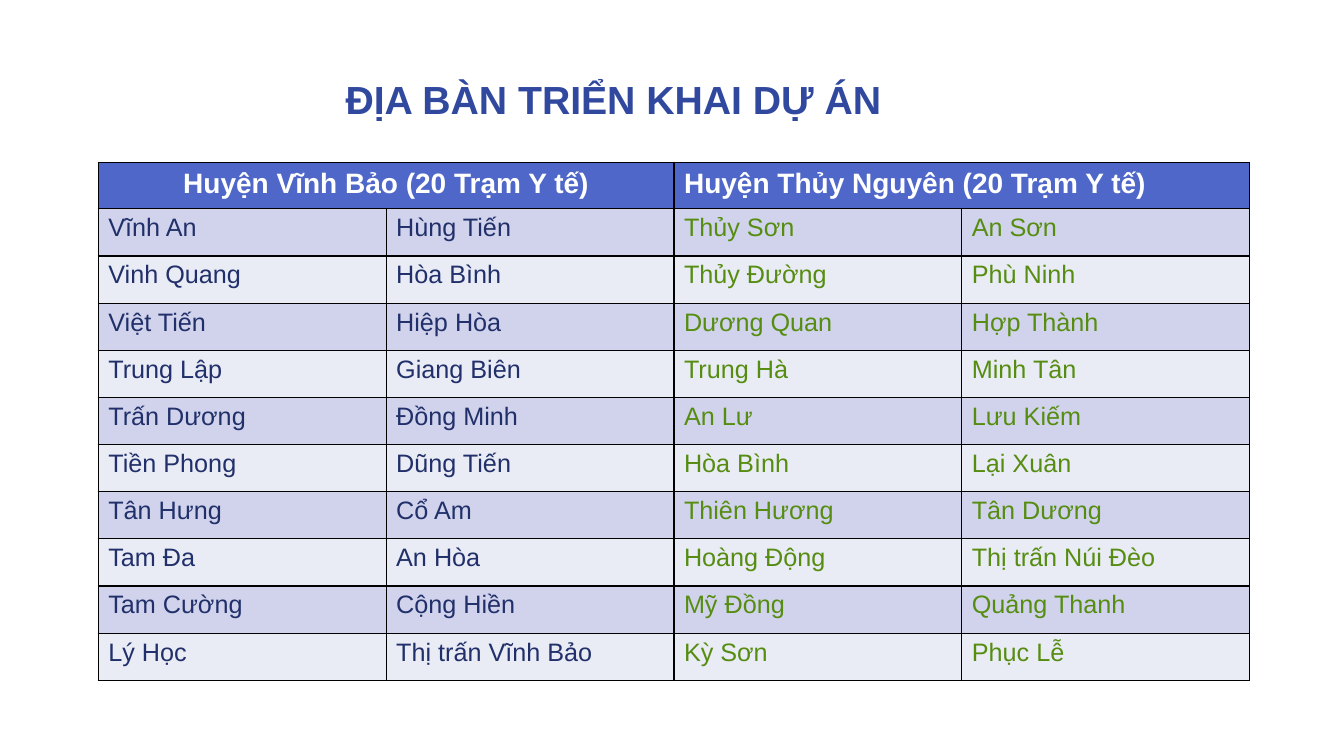
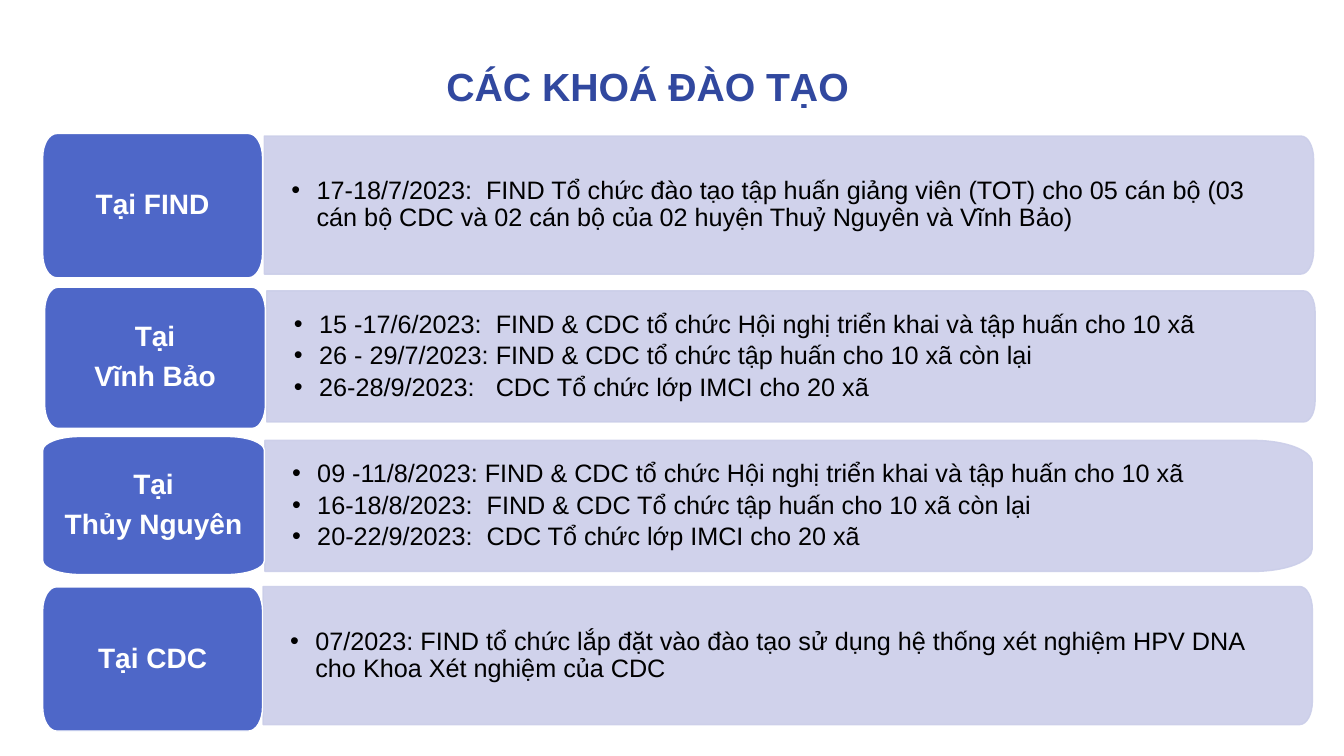
from typing import NamedTuple

from lxml.etree import SubElement
from pptx import Presentation
from pptx.dml.color import RGBColor
from pptx.enum.text import MSO_ANCHOR, PP_ALIGN
from pptx.oxml.ns import qn
from pptx.util import Pt

FONT = "Arial"
BEND = 0.45
HUES = {
    "title": "31489F",
    "head": "4E67C8",
    "band": "D0D3EB",
    "pale": "E9EBF5",
    "panel": "CBCEE9",
    "navy": "21306A",
    "green": "568D11",
    "white": "FFFFFF",
    "black": "000000",
}


class Box(NamedTuple):
    x: float
    y: float
    w: float
    h: float
    rx: float = 0
    ry: float = 0


class Course(NamedTuple):
    label: Box
    panel: Box
    place: str
    notes: list[str]
    tab: float = 0


HEADS = ["Huyện Vĩnh Bảo (20 Trạm Y tế)", "Huyện Thủy Nguyên (20 Trạm Y tế)"]
TOWNS = [
    ["Vĩnh An", "Hùng Tiến", "Thủy Sơn", "An Sơn"],
    ["Vinh Quang", "Hòa Bình", "Thủy Đường", "Phù Ninh"],
    ["Việt Tiến", "Hiệp Hòa", "Dương Quan", "Hợp Thành"],
    ["Trung Lập", "Giang Biên", "Trung Hà", "Minh Tân"],
    ["Trấn Dương", "Đồng Minh", "An Lư", "Lưu Kiếm"],
    ["Tiền Phong", "Dũng Tiến", "Hòa Bình", "Lại Xuân"],
    ["Tân Hưng", "Cổ Am", "Thiên Hương", "Tân Dương"],
    ["Tam Đa", "An Hòa", "Hoàng Động", "Thị trấn Núi Đèo"],
    ["Tam Cường", "Cộng Hiền", "Mỹ Đồng", "Quảng Thanh"],
    ["Lý Học", "Thị trấn Vĩnh Bảo", "Kỳ Sơn", "Phục Lễ"],
]
COURSES = [
    Course(
        Box(30.5, 95.4, 157, 103, 10, 17),
        Box(188.8, 97.2, 749.5, 98.6, 9, 16.5),
        "Tại FIND",
        ["17-18/7/2023:\tFIND Tổ chức đào tạo tập huấn giảng viên (TOT) cho 05 cán bộ "
         "(03 cán bộ CDC và 02 cán bộ của 02 huyện Thuỷ Nguyên và Vĩnh Bảo)"],
        139,
    ),
    Course(
        Box(31.9, 205.2, 157.7, 100.8, 9.5, 17),
        Box(190.6, 207.8, 748.8, 93.6, 8, 15),
        "Tại\nVĩnh Bảo",
        ["15 -17/6/2023:\tFIND & CDC tổ chức Hội nghị triển khai và tập huấn cho 10 xã",
         "26 - 29/7/2023:\tFIND & CDC tổ chức tập huấn cho 10 xã còn lại",
         "26-28/9/2023:\tCDC Tổ chức lớp IMCI cho 20 xã"],
        144.2,
    ),
    Course(
        Box(30.5, 311.8, 158.4, 98.6, 26.5, 10),
        Box(189.2, 314.6, 748.1, 93.6, 42, 16),
        "Tại\nThủy Nguyên",
        ["09 -11/8/2023: FIND & CDC tổ chức Hội nghị triển khai và tập huấn cho 10 xã",
         "16-18/8/2023:\tFIND & CDC Tổ chức tập huấn cho 10 xã còn lại",
         "20-22/9/2023:\tCDC Tổ chức lớp IMCI cho 20 xã"],
        139,
    ),
    Course(
        Box(30.5, 419.2, 157, 103, 10, 17),
        Box(187.9, 419, 749.5, 98.6, 9, 16.5),
        "Tại CDC",
        ["07/2023: FIND tổ chức lắp đặt vào đào tạo sử dụng hệ thống xét nghiệm HPV DNA "
         "cho Khoa Xét nghiệm của CDC"],
    ),
]


def tint(key: str) -> RGBColor:
    return RGBColor.from_string(HUES[key])


def style(para, size: float, hue: str, bold: bool = False) -> None:
    for run in para.runs:
        run.font.name = FONT
        run.font.size = Pt(size)
        run.font.bold = bold
        run.font.color.rgb = tint(hue)


def add_title(slide, text: str, box: Box, lead: float = 1.0) -> None:
    shape = slide.shapes.add_textbox(Pt(box.x), Pt(box.y), Pt(box.w), Pt(box.h))
    frame = shape.text_frame
    frame.word_wrap = True
    frame.vertical_anchor = MSO_ANCHOR.MIDDLE
    frame.text = text
    frame.paragraphs[0].line_spacing = lead
    style(frame.paragraphs[0], 28, "title", True)


def set_edge(cell) -> None:
    props = cell._tc.get_or_add_tcPr()
    for side in ("lnL", "lnR", "lnT", "lnB"):
        line = SubElement(props, qn(f"a:{side}"), w=str(Pt(1)))
        fill = SubElement(line, qn("a:solidFill"))
        SubElement(fill, qn("a:srgbClr"), val=HUES["black"])


def fill_cell(cell, fill: str, text: str, size: float, hue: str, bold: bool = False) -> None:
    cell.fill.solid()
    cell.fill.fore_color.rgb = tint(fill)
    cell.text_frame.text = text
    style(cell.text_frame.paragraphs[0], size, hue, bold)


def add_towns(slide, box: Box) -> None:
    rows, cols = len(TOWNS) + 1, len(TOWNS[0])
    frame = slide.shapes.add_table(rows, cols, Pt(box.x), Pt(box.y), Pt(box.w), Pt(box.h))
    table = frame.table
    for col in table.columns:
        col.width = Pt(box.w / cols)
    for num, row in enumerate(table.rows):
        row.height = Pt(33.7 if num else 33)
    for cell in table.iter_cells():
        set_edge(cell)
    for num, text in enumerate(HEADS):
        cell = table.cell(0, num * 2)
        cell.merge(table.cell(0, num * 2 + 1))
        fill_cell(cell, "head", text, 20, "white", True)
    table.cell(0, 0).text_frame.paragraphs[0].alignment = PP_ALIGN.CENTER
    for row, names in enumerate(TOWNS, 1):
        for col, name in enumerate(names):
            fill = "band" if row % 2 else "pale"
            fill_cell(table.cell(row, col), fill, name, 18, "navy" if col < 2 else "green")


def trace(box: Box, both: bool) -> list[tuple[int, int]]:
    x, y, rx, ry = box.x, box.y, box.rx, box.ry
    right, low = x + box.w, y + box.h
    points = []
    for side, end, dx, dy, flip in [
        (right, y, -rx, ry, False),
        (right, low, -rx, -ry, True),
        (x, low, rx, -ry, False),
        (x, y, rx, ry, True),
    ]:
        if not both and side == x:
            points.append((side, end))
            continue
        curve = [
            (side + dx, end),
            (side + dx * BEND, end),
            (side, end + dy * BEND),
            (side, end + dy),
        ]
        points += curve[::-1] if flip else curve
    return [(Pt(left), Pt(top)) for left, top in points]


def curve_ends(shape, count: int) -> None:
    steps = list(shape._element.iter(qn("a:lnTo")))
    for start in range(0, count * 4, 4):
        first, *rest = steps[start:start + 3]
        first.tag = qn("a:cubicBezTo")
        for step in rest:
            first.append(step[0])
            step.getparent().remove(step)


def add_block(slide, box: Box, both: bool, fill: str, edge: str, text: str, pad: tuple[float, float]):
    first, *rest = trace(box, both)
    pen = slide.shapes.build_freeform(*first, scale=1.0)
    pen.add_line_segments(rest, close=True)
    shape = pen.convert_to_shape()
    curve_ends(shape, 4 if both else 2)
    shape.shadow.inherit = False
    shape.fill.solid()
    shape.fill.fore_color.rgb = tint(fill)
    shape.line.color.rgb = tint(edge)
    shape.line.width = Pt(1)
    frame = shape.text_frame
    frame.word_wrap = True
    frame.vertical_anchor = MSO_ANCHOR.MIDDLE
    frame.margin_left, frame.margin_right = Pt(pad[0]), Pt(pad[1])
    frame.margin_top = frame.margin_bottom = Pt(6)
    frame.text = text
    return shape


def set_list(para, tab: float) -> None:
    props = para._p.get_or_add_pPr()
    props.set("marL", str(Pt(18)))
    props.set("indent", str(Pt(-18)))
    SubElement(props, qn("a:buFont"), typeface=FONT)
    SubElement(props, qn("a:buChar"), char="•")
    if tab:
        tabs = SubElement(props, qn("a:tabLst"))
        SubElement(tabs, qn("a:tab"), pos=str(Pt(tab)), algn="l")


def add_course(slide, course: Course) -> None:
    panel = add_block(slide, course.panel, False, "panel", "panel", "\n".join(course.notes), (19.4, 22.3))
    for color in panel._element.spPr.iter(qn("a:srgbClr")):
        SubElement(color, qn("a:alpha"), val="90000")
    for para in panel.text_frame.paragraphs:
        set_list(para, course.tab if "\t" in para.text else 0)
        para.alignment = PP_ALIGN.LEFT
        para.line_spacing = 0.9
        para.space_after = Pt(3)
        style(para, 18, "black")
    label = add_block(slide, course.label, True, "head", "white", course.place, (10, 10))
    for para in label.text_frame.paragraphs:
        para.alignment = PP_ALIGN.CENTER
        para.line_spacing = 0.9
        para.space_after = Pt(7)
        style(para, 20, "white", True)


def main() -> None:
    deck = Presentation()
    deck.slide_width, deck.slide_height = Pt(960), Pt(540)
    blank = deck.slide_layouts[6]

    slide = deck.slides.add_slide(blank)
    add_towns(slide, Box(70.2, 116.2, 822.4, 370))
    add_title(slide, "ĐỊA BÀN TRIỂN KHAI DỰ ÁN", Box(239.8, 49.7, 653, 41.8))

    slide = deck.slides.add_slide(blank)
    for course in COURSES:
        add_course(slide, course)
    add_title(slide, "CÁC KHOÁ ĐÀO TẠO", Box(311.8, 42.5, 431.3, 41.8), 0.9)

    deck.save("out.pptx")


if __name__ == "__main__":
    main()
